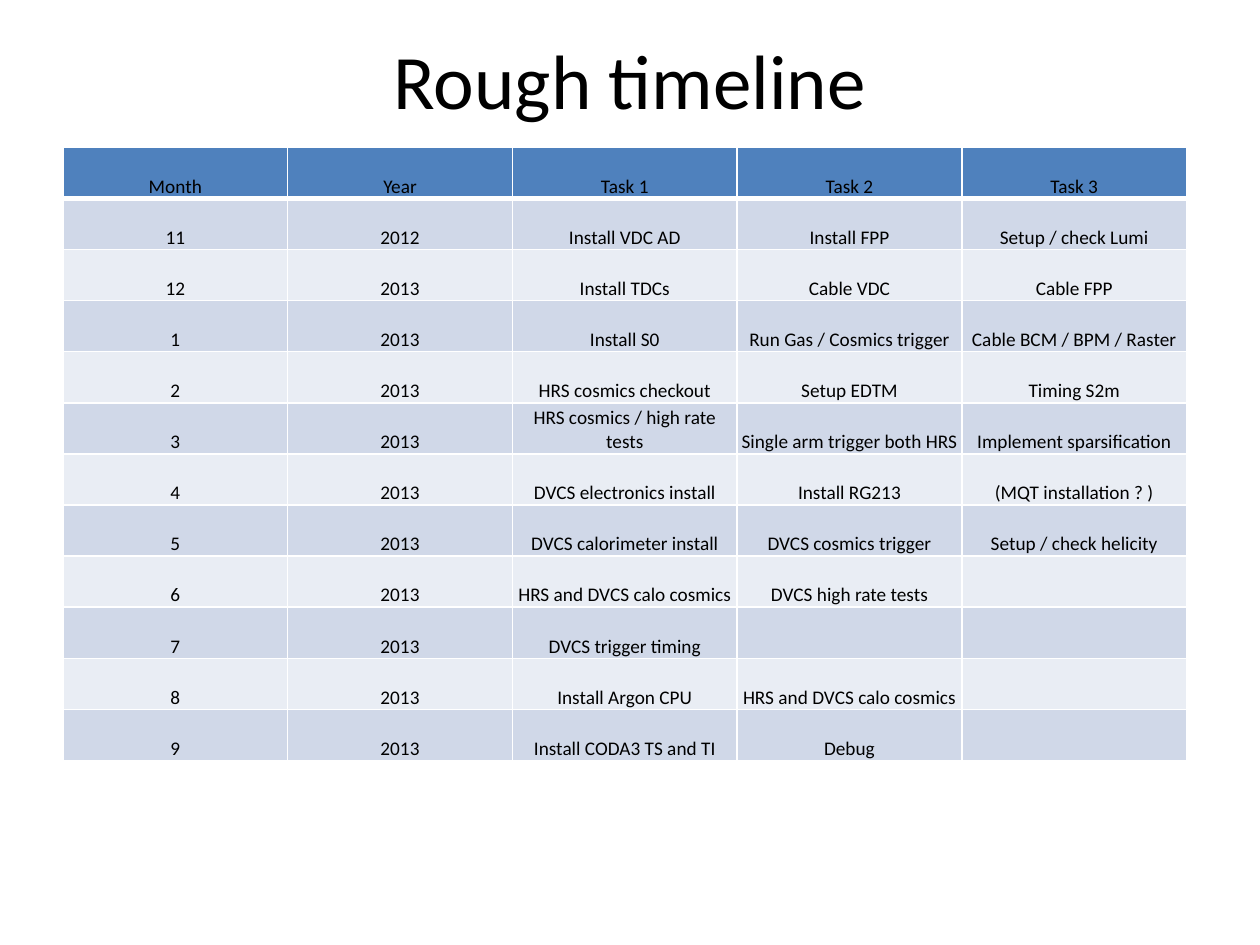
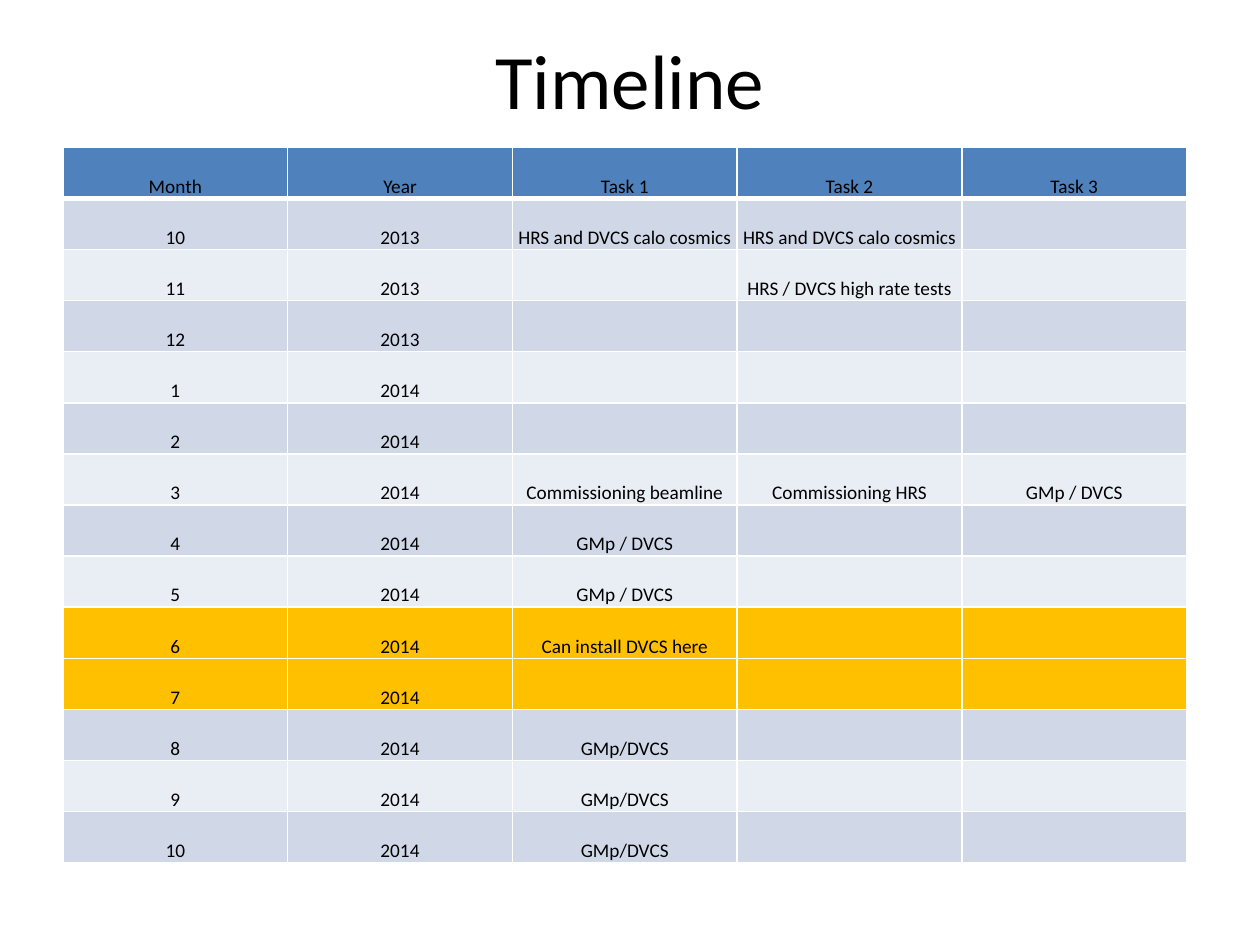
from dataclasses import dataclass

from lxml.etree import SubElement
from pptx import Presentation
from pptx.dml.color import RGBColor
from pptx.enum.text import MSO_ANCHOR as Anchor, PP_ALIGN as Align
from pptx.oxml.ns import qn
from pptx.util import Cm, Pt


@dataclass(frozen=True)
class Theme:
    font: str = "Calibri"
    title_size: int = 44
    cell_size: int = 11
    text: str = "000000"
    header: str = "4F81BD"
    bands: tuple = ("D0D8E8", "E9EDF4")
    highlight: str = "FFC000"
    rule: str = "FFFFFF"
    thin: int = 1
    thick: int = 3


theme = Theme()

# Shared layout, in centimetres
LEFT, TABLE_TOP = 1.27, 2.97
COLUMN_WIDTH, ROW_HEIGHT = 4.53, 1.03
HEADINGS = ("Month", "Year", "Task 1", "Task 2", "Task 3")

# Title, schedule rows and highlighted row numbers of each slide
timelines = [
    ("Rough timeline", [
        ("11", "2012", "Install VDC AD", "Install FPP", "Setup / check Lumi"),
        ("12", "2013", "Install TDCs", "Cable VDC", "Cable FPP"),
        ("1", "2013", "Install S0", "Run Gas / Cosmics trigger", "Cable BCM / BPM / Raster"),
        ("2", "2013", "HRS cosmics checkout", "Setup EDTM", "Timing S2m"),
        ("3", "2013", "HRS cosmics / high rate tests", "Single arm trigger both HRS",
         "Implement sparsification"),
        ("4", "2013", "DVCS electronics install", "Install RG213", "(MQT installation ? )"),
        ("5", "2013", "DVCS calorimeter install", "DVCS cosmics trigger", "Setup / check helicity"),
        ("6", "2013", "HRS and DVCS calo cosmics", "DVCS high rate tests", ""),
        ("7", "2013", "DVCS trigger timing", "", ""),
        ("8", "2013", "Install Argon CPU", "HRS and DVCS calo cosmics", ""),
        ("9", "2013", "Install CODA3 TS and TI", "Debug", ""),
    ], ()),
    ("Timeline", [
        ("10", "2013", "HRS and DVCS calo cosmics", "HRS and DVCS calo cosmics", ""),
        ("11", "2013", "", "HRS / DVCS high rate tests", ""),
        ("12", "2013", "", "", ""),
        ("1", "2014", "", "", ""),
        ("2", "2014", "", "", ""),
        ("3", "2014", "Commissioning beamline", "Commissioning HRS", "GMp / DVCS"),
        ("4", "2014", "GMp / DVCS", "", ""),
        ("5", "2014", "GMp / DVCS", "", ""),
        ("6", "2014", "Can install DVCS here", "", ""),
        ("7", "2014", "", "", ""),
        ("8", "2014", "GMp/DVCS", "", ""),
        ("9", "2014", "GMp/DVCS", "", ""),
        ("10", "2014", "GMp/DVCS", "", ""),
    ], (9, 10)),
]


def style_paragraph(paragraph, size):
    paragraph.alignment = Align.CENTER
    paragraph.font.name = theme.font
    paragraph.font.size = Pt(size)
    paragraph.font.bold = False
    paragraph.font.color.rgb = RGBColor.from_string(theme.text)


def add_borders(cell, top, bottom):
    properties = cell._tc.get_or_add_tcPr()
    widths = {"lnL": theme.thin, "lnR": theme.thin, "lnT": top, "lnB": bottom}
    for side, width in widths.items():
        line = SubElement(properties, qn(f"a:{side}"), w=str(Pt(width)))
        fill = SubElement(line, qn("a:solidFill"))
        SubElement(fill, qn("a:srgbClr"), val=theme.rule)


presentation = Presentation()
presentation.slide_width, presentation.slide_height = Cm(25.4), Cm(19.05)
title_only = presentation.slide_layouts[5]

for title_text, schedule, highlighted in timelines:
    slide = presentation.slides.add_slide(title_only)

    # Title
    title = slide.shapes.title
    title.left, title.top, title.width, title.height = Cm(LEFT), Cm(0), Cm(22.86), Cm(3.18)
    title.text_frame.text = title_text
    title.text_frame.vertical_anchor = Anchor.MIDDLE
    style_paragraph(title.text_frame.paragraphs[0], theme.title_size)

    # Schedule table
    rows = [HEADINGS, *schedule]
    table = slide.shapes.add_table(
        len(rows), len(HEADINGS), Cm(LEFT), Cm(TABLE_TOP),
        Cm(COLUMN_WIDTH * len(HEADINGS)), Cm(ROW_HEIGHT * len(rows))).table
    table.first_row = table.horz_banding = False
    for column in table.columns:
        column.width = Cm(COLUMN_WIDTH)

    for row_number, values in enumerate(rows):
        table.rows[row_number].height = Cm(ROW_HEIGHT)
        if row_number == 0:
            colour = theme.header
        elif row_number in highlighted:
            colour = theme.highlight
        else:
            colour = theme.bands[(row_number - 1) % 2]

        for column_number, value in enumerate(values):
            cell = table.cell(row_number, column_number)
            cell.text = value
            cell.vertical_anchor = Anchor.BOTTOM
            cell.margin_left = cell.margin_right = cell.margin_top = Cm(0.03)
            cell.margin_bottom = 0
            add_borders(cell,
                        top=theme.thick if row_number == 1 else theme.thin,
                        bottom=theme.thick if row_number == 0 else theme.thin)
            cell.fill.solid()
            cell.fill.fore_color.rgb = RGBColor.from_string(colour)
            style_paragraph(cell.text_frame.paragraphs[0], theme.cell_size)

presentation.save("out.pptx")
